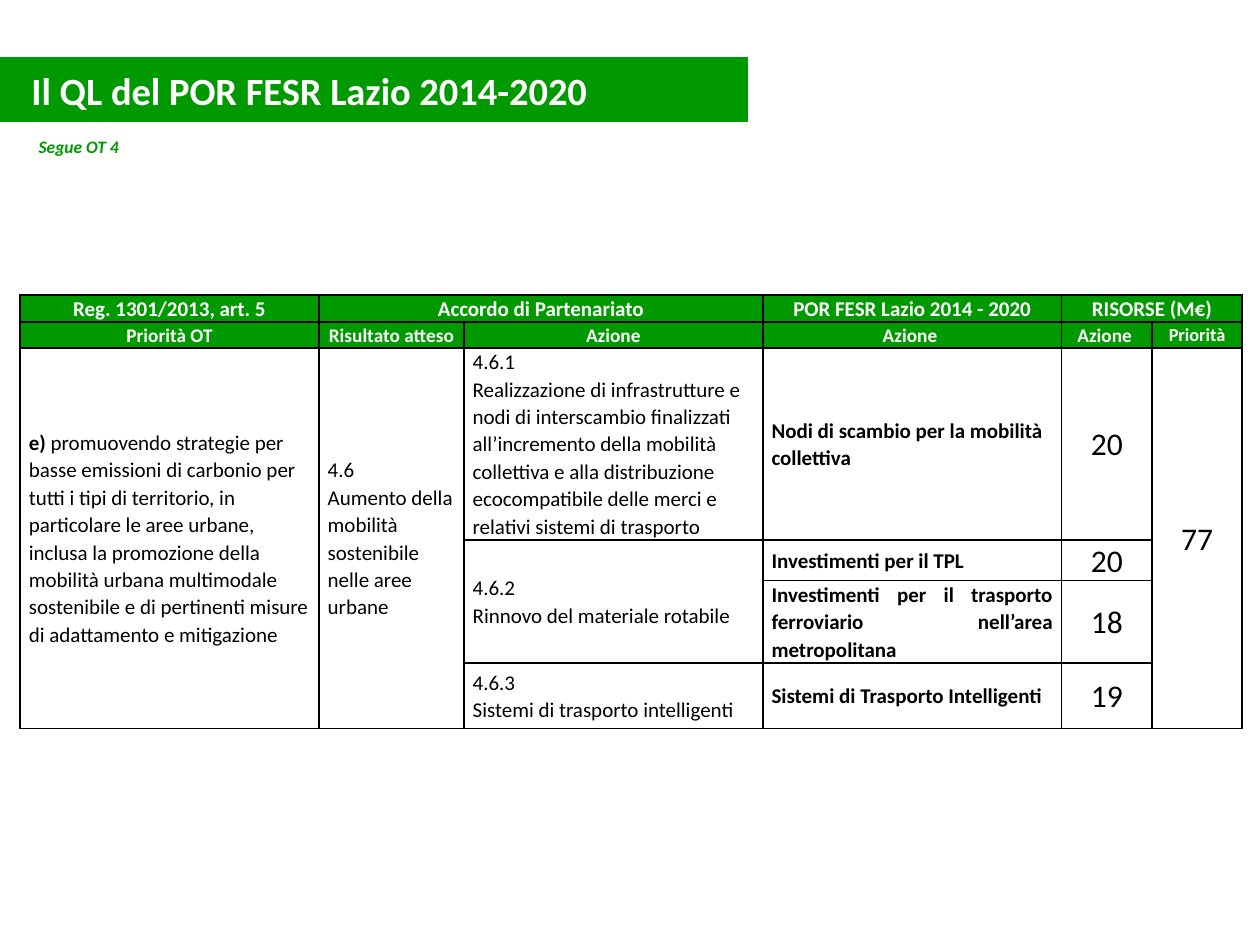
"""Builds the slide on the Lazio POR FESR logical framework, thematic objective 4."""
from dataclasses import dataclass

from lxml.etree import SubElement
from pptx import Presentation
from pptx.dml.color import RGBColor
from pptx.enum.shapes import MSO_SHAPE as Shape
from pptx.enum.text import MSO_ANCHOR as Anchor, PP_ALIGN as Align
from pptx.oxml.ns import qn
from pptx.util import Pt


@dataclass(frozen=True)
class Theme:
    font: str = "Calibri"
    green: RGBColor = RGBColor(0x00, 0x99, 0x00)
    white: RGBColor = RGBColor(0xFF, 0xFF, 0xFF)
    black: RGBColor = RGBColor(0x00, 0x00, 0x00)
    title: float = 22
    note: float = 10
    body: float = 12
    subheading: float = 11
    narrow_heading: float = 10.5
    amount: float = 18


THEME = Theme()
COLUMN_WIDTHS = [170.8, 82.8, 170.8, 170.8, 51.6, 51.6]
ROW_HEIGHTS = [15.4, 14.9, 109.7, 23.4, 46.9, 37.7]
SPANS = [(0, 1, 0, 2), (0, 4, 0, 5), (2, 0, 5, 0), (2, 1, 5, 1), (2, 5, 5, 5), (3, 2, 4, 2)]
HEADINGS = {
    (0, 0): "Reg. 1301/2013, art. 5",
    (0, 1): "Accordo di Partenariato",
    (0, 3): "POR FESR Lazio 2014 - 2020",
    (0, 4): "RISORSE (M€)",
}
SUBHEADINGS = {
    (1, 0): "Priorità OT",
    (1, 1): "Risultato atteso",
    (1, 2): "Azione",
    (1, 3): "Azione ",
    (1, 4): "Azione ",
}
NARROW_HEADINGS = {(1, 5): "Priorità"}
PARTNERSHIP = {
    (2, 1): "4.6\nAumento della mobilità sostenibile nelle aree urbane",
    (2, 2): "4.6.1\nRealizzazione di infrastrutture e nodi di interscambio finalizzati "
            "all’incremento della mobilità collettiva e alla distribuzione ecocompatibile "
            "delle merci e relativi sistemi di trasporto",
    (3, 2): "4.6.2\nRinnovo del materiale rotabile",
    (5, 2): "4.6.3\nSistemi di trasporto intelligenti",
}
ACTIONS = {
    (2, 3): "Nodi di scambio per la mobilità collettiva",
    (3, 3): "Investimenti per il TPL",
}
JUSTIFIED_ACTIONS = {
    (4, 3): "Investimenti per il trasporto ferroviario nell’area metropolitana",
    (5, 3): "Sistemi di Trasporto Intelligenti ",
}
AMOUNTS = {(2, 4): "20", (3, 4): "20", (4, 4): "18", (5, 4): "19", (2, 5): "77"}
PRIORITY = [
    ("e) ", True),
    ("promuovendo strategie per basse emissioni di carbonio per tutti i tipi di territorio, "
     "in particolare le aree urbane, inclusa la promozione della mobilità urbana multimodale "
     "sostenibile e di pertinenti misure di adattamento e mitigazione", False),
]


def style_font(font, size, color, bold=None, italic=None):
    font.name, font.size, font.bold, font.italic = THEME.font, Pt(size), bold, italic
    font.color.rgb = color


def add_note(slide, text):
    note = slide.shapes.add_textbox(Pt(15), Pt(44), Pt(452), Pt(79)).text_frame
    note.word_wrap = True
    note.vertical_anchor = Anchor.MIDDLE
    note.text = text
    style_font(note.paragraphs[0].font, THEME.note, THEME.green, True, True)


def add_title_band(slide, text):
    band = slide.shapes.add_shape(Shape.RECTANGLE, 0, Pt(33), Pt(427), Pt(36.5))
    band.shadow.inherit = False
    band.fill.solid()
    band.fill.fore_color.rgb = band.line.color.rgb = THEME.green
    band.line.width = Pt(0.75)
    title = band.text_frame
    title.word_wrap = True
    title.vertical_anchor = Anchor.TOP
    title.margin_left, title.margin_top = Pt(18), Pt(5.4)
    title.text = text
    title.paragraphs[0].alignment = Align.LEFT
    style_font(title.paragraphs[0].font, THEME.title, THEME.white, True)


def frame_cell(cell):
    cell.margin_left = cell.margin_right = Pt(5)
    cell.margin_top = cell.margin_bottom = 0
    cell.vertical_anchor = Anchor.MIDDLE
    properties = cell._tc.get_or_add_tcPr()
    for side in ("a:lnL", "a:lnR", "a:lnT", "a:lnB"):
        border = SubElement(properties, qn(side), w=str(Pt(1)))
        fill = SubElement(border, qn("a:solidFill"))
        SubElement(fill, qn("a:srgbClr"), val=str(THEME.black))


def fill_cells(table, texts, size, color=THEME.black, bold=False, align=Align.LEFT):
    for (row, column), text in texts.items():
        content = table.cell(row, column).text_frame
        content.text = text
        for paragraph in content.paragraphs:
            paragraph.alignment = align
            paragraph.line_spacing = 1.07
            style_font(paragraph.font, size, color, bold)


def fill_priority(cell):
    paragraph = cell.text_frame.paragraphs[0]
    paragraph.line_spacing = 1.07
    style_font(paragraph.font, THEME.body, THEME.black)
    for text, bold in PRIORITY:
        run = paragraph.add_run()
        run.text = text
        style_font(run.font, THEME.body, THEME.black, bold)


def add_framework(slide):
    table = slide.shapes.add_table(
        len(ROW_HEIGHTS), len(COLUMN_WIDTHS), Pt(11.5), Pt(168.5),
        Pt(sum(COLUMN_WIDTHS)), Pt(sum(ROW_HEIGHTS))).table
    table.first_row = table.horz_banding = False
    for column, width in zip(table.columns, COLUMN_WIDTHS):
        column.width = Pt(width)
    for index, (row, height) in enumerate(zip(table.rows, ROW_HEIGHTS)):
        row.height = Pt(height)
        for cell in row.cells:
            frame_cell(cell)
            if index < 2:
                cell.fill.solid()
                cell.fill.fore_color.rgb = THEME.green
            else:
                cell.fill.background()
    for top, left, bottom, right in SPANS:
        table.cell(top, left).merge(table.cell(bottom, right))

    for texts, size in ((HEADINGS, THEME.body), (SUBHEADINGS, THEME.subheading),
                        (NARROW_HEADINGS, THEME.narrow_heading)):
        fill_cells(table, texts, size, THEME.white, True, Align.CENTER)
    fill_priority(table.cell(2, 0))
    fill_cells(table, PARTNERSHIP, THEME.body)
    fill_cells(table, ACTIONS, THEME.body, bold=True)
    fill_cells(table, JUSTIFIED_ACTIONS, THEME.body, bold=True, align=Align.JUSTIFY)
    fill_cells(table, AMOUNTS, THEME.amount, align=Align.CENTER)


def main():
    deck = Presentation()
    deck.slide_width, deck.slide_height = Pt(720), Pt(540)
    slide = deck.slides.add_slide(deck.slide_layouts[6])
    add_note(slide, "Segue OT 4")
    add_framework(slide)
    add_title_band(slide, "Il QL del POR FESR Lazio 2014-2020")
    deck.save("out.pptx")


if __name__ == "__main__":
    main()
